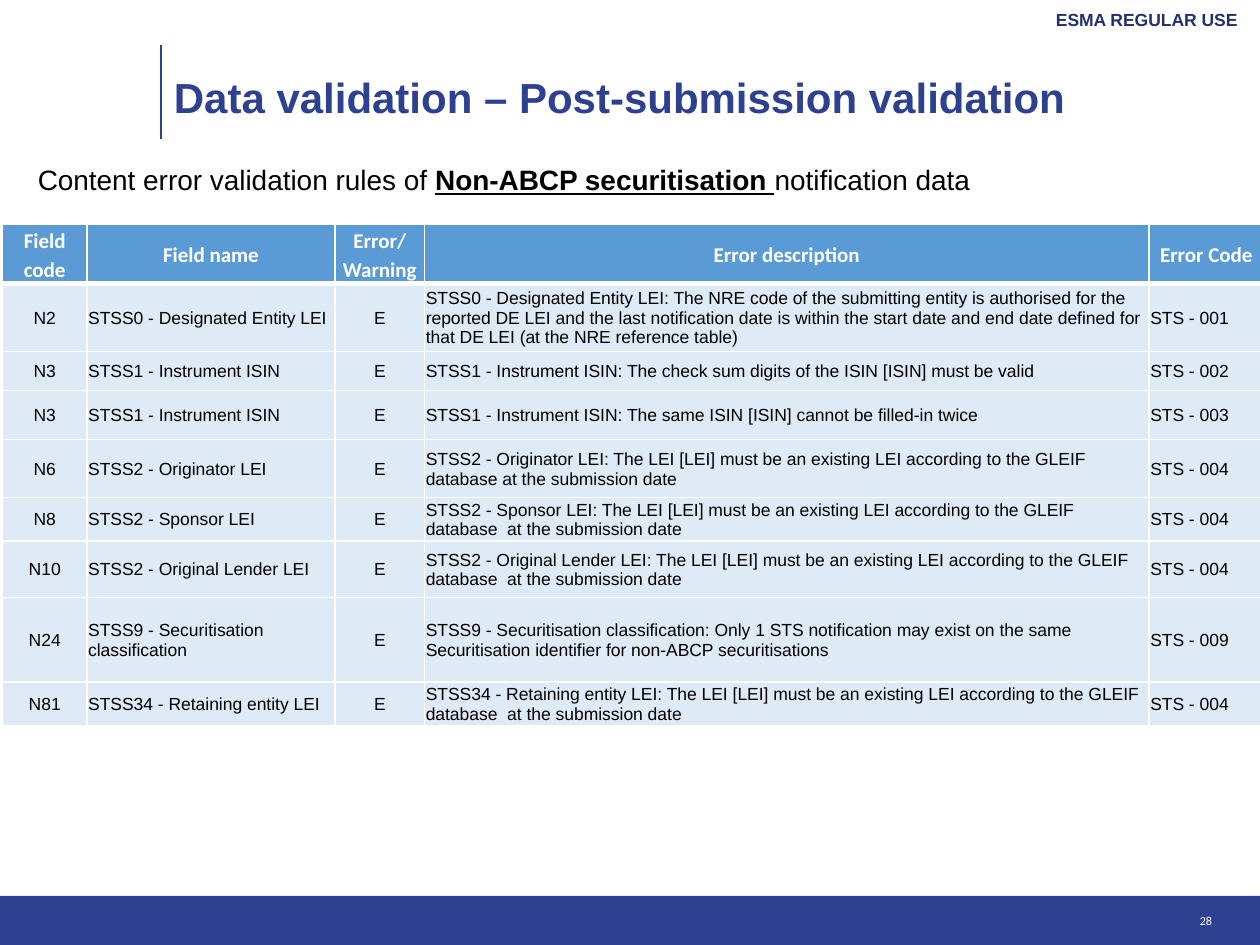
from lxml.etree import SubElement
from pptx import Presentation
from pptx.dml.color import RGBColor
from pptx.enum.shapes import MSO_CONNECTOR, MSO_SHAPE
from pptx.enum.text import MSO_ANCHOR, PP_ALIGN
from pptx.oxml.ns import qn
from pptx.util import Inches, Pt

COLORS = {
    "brand": "2D4190",
    "label": "22316C",
    "header": "5B9BD5",
    "row": "DEEAF6",
    "white": "FFFFFF",
    "black": "000000",
}
COLUMNS, ROWS = 100, 75
COLUMN_WIDTHS = [6.7, 19.7, 7.1, 57.5, 9.1]
ROW_HEIGHTS = [4.7, 5.4, 3.1, 3.9, 4.6, 3.2, 4.5, 6.7, 3.2]
HEADERS = ["Field code", "Field name", "Error/ Warning", "Error description", "Error Code"]
CENTERED_COLUMNS = (0, 2)
LEI_RULE = "The LEI [LEI] must be an existing LEI according to the GLEIF database"
RULES = [
    ("N2", "STSS0 - Designated Entity LEI",
     "The NRE code of the submitting entity is authorised for the reported DE LEI and the last "
     "notification date is within the start date and end date defined for that DE LEI "
     "(at the NRE reference table)", "001"),
    ("N3", "STSS1 - Instrument ISIN", "The check sum digits of the ISIN [ISIN] must be valid", "002"),
    ("N3", "STSS1 - Instrument ISIN", "The same ISIN [ISIN] cannot be filled-in twice", "003"),
    ("N6", "STSS2 - Originator LEI", f"{LEI_RULE} at the submission date", "004"),
    ("N8", "STSS2 - Sponsor LEI", f"{LEI_RULE}  at the submission date", "004"),
    ("N10", "STSS2 - Original Lender LEI", f"{LEI_RULE}  at the submission date", "004"),
    ("N24", "STSS9 - Securitisation classification",
     "Only 1 STS notification may exist on the same Securitisation identifier for non-ABCP "
     "securitisations", "009"),
    ("N81", "STSS34 - Retaining entity LEI", f"{LEI_RULE}  at the submission date", "004"),
]


def units(count):
    return Inches(count / 10)


def color(name):
    return RGBColor.from_string(COLORS[name])


def add_span(para, text, size, tint, font="Arial", bold=False, underline=False):
    span = para.add_run()
    span.text = text
    span.font.name = font
    span.font.size = Pt(size)
    span.font.bold = bold
    span.font.underline = underline
    span.font.color.rgb = color(tint)


def add_text(page, box, align=PP_ALIGN.LEFT, anchor=MSO_ANCHOR.TOP, left=0, top=0):
    frame = page.shapes.add_textbox(*map(units, box)).text_frame
    frame.word_wrap = True
    frame.vertical_anchor = anchor
    frame.margin_left, frame.margin_top = units(left), units(top)
    frame.margin_right = frame.margin_bottom = 0
    para = frame.paragraphs[0]
    para.alignment = align
    return para


def add_footer(page, box):
    left, top, width, height = box
    band = page.shapes.add_shape(MSO_SHAPE.RECTANGLE, *map(units, box))
    band.shadow.inherit = False
    band.fill.solid()
    band.fill.fore_color.rgb = color("brand")
    band.line.fill.background()
    number_box = (left + width - 19.5, top + 1.4, 15.7, 1.1)
    add_span(add_text(page, number_box, PP_ALIGN.RIGHT), "28", 7, "white", "Calibri")


def add_label(page, box):
    add_span(add_text(page, box, PP_ALIGN.RIGHT), "ESMA REGULAR USE", 10, "label", bold=True)


def add_title(page, box):
    left, top, width, height = box
    rule = page.shapes.add_connector(
        MSO_CONNECTOR.STRAIGHT, *map(units, (left, top + height, left, top)))
    rule.line.color.rgb = color("brand")
    rule.line.width = Pt(1)
    SubElement(rule._element.spPr, qn("a:effectLst"))
    para = add_text(page, (left + 1, top + 1.7, width - 1, 4.8), anchor=MSO_ANCHOR.MIDDLE)
    add_span(para, "Data validation – Post-submission validation", 24, "brand", bold=True)


def add_intro(page, box):
    para = add_text(page, box, left=3, top=0.2)
    add_span(para, "Content error validation rules of ", 16, "black")
    add_span(para, "Non-ABCP securitisation ", 16, "black", bold=True, underline=True)
    add_span(para, "notification data", 16, "black")


def add_borders(cell, bottom):
    properties = cell._tc.get_or_add_tcPr()
    for index, (side, width) in enumerate(
            [("lnL", 1), ("lnR", 1), ("lnT", 1), ("lnB", bottom)]):
        border = properties.makeelement(qn(f"a:{side}"), {"w": str(Pt(width))})
        fill = SubElement(border, qn("a:solidFill"))
        SubElement(fill, qn("a:srgbClr"), val=COLORS["white"])
        properties.insert(index, border)


def fill_cell(cell, text, is_header, centered):
    cell.fill.solid()
    cell.fill.fore_color.rgb = color("header" if is_header else "row")
    cell.vertical_anchor = MSO_ANCHOR.MIDDLE
    cell.margin_left = cell.margin_right = units(0.4 if is_header else 0.1)
    cell.margin_top = units(0 if is_header else 0.1)
    cell.margin_bottom = 0
    para = cell.text_frame.paragraphs[0]
    para.alignment = PP_ALIGN.CENTER if centered else PP_ALIGN.LEFT
    if is_header:
        para.line_spacing = 1.15
        para.space_after = Pt(12.5)
        add_span(para, text, 12, "white", "Calibri", bold=True)
    else:
        add_span(para, text, 10, "black")
    add_borders(cell, 3 if is_header else 1)


def add_rules_table(page, box):
    content = [HEADERS] + [
        (field, name, "E", f"{name}: {rule}", f"STS - {code}")
        for field, name, rule, code in RULES
    ]
    table = page.shapes.add_table(len(content), len(HEADERS), *map(units, box)).table
    for column, width in zip(table.columns, COLUMN_WIDTHS):
        column.width = units(width)
    for row, height in zip(table.rows, ROW_HEIGHTS):
        row.height = units(height)
    for row_index, texts in enumerate(content):
        is_header = row_index == 0
        for column_index, text in enumerate(texts):
            centered = is_header or column_index in CENTERED_COLUMNS
            fill_cell(table.cell(row_index, column_index), text, is_header, centered)


def main():
    deck = Presentation()
    deck.slide_width, deck.slide_height = units(COLUMNS), units(ROWS)
    page = deck.slides.add_slide(deck.slide_layouts[6])
    add_footer(page, (0, 71.1, COLUMNS, 3.9))
    add_label(page, (66.5, 0.7, 31.7, 1.6))
    add_intro(page, (0, 12.7, COLUMNS, 54.8))
    add_rules_table(page, (0.2, 17.8, sum(COLUMN_WIDTHS), sum(ROW_HEIGHTS)))
    add_title(page, (12.8, 3.6, 83.7, 7.4))
    deck.save("out.pptx")


if __name__ == "__main__":
    main()
